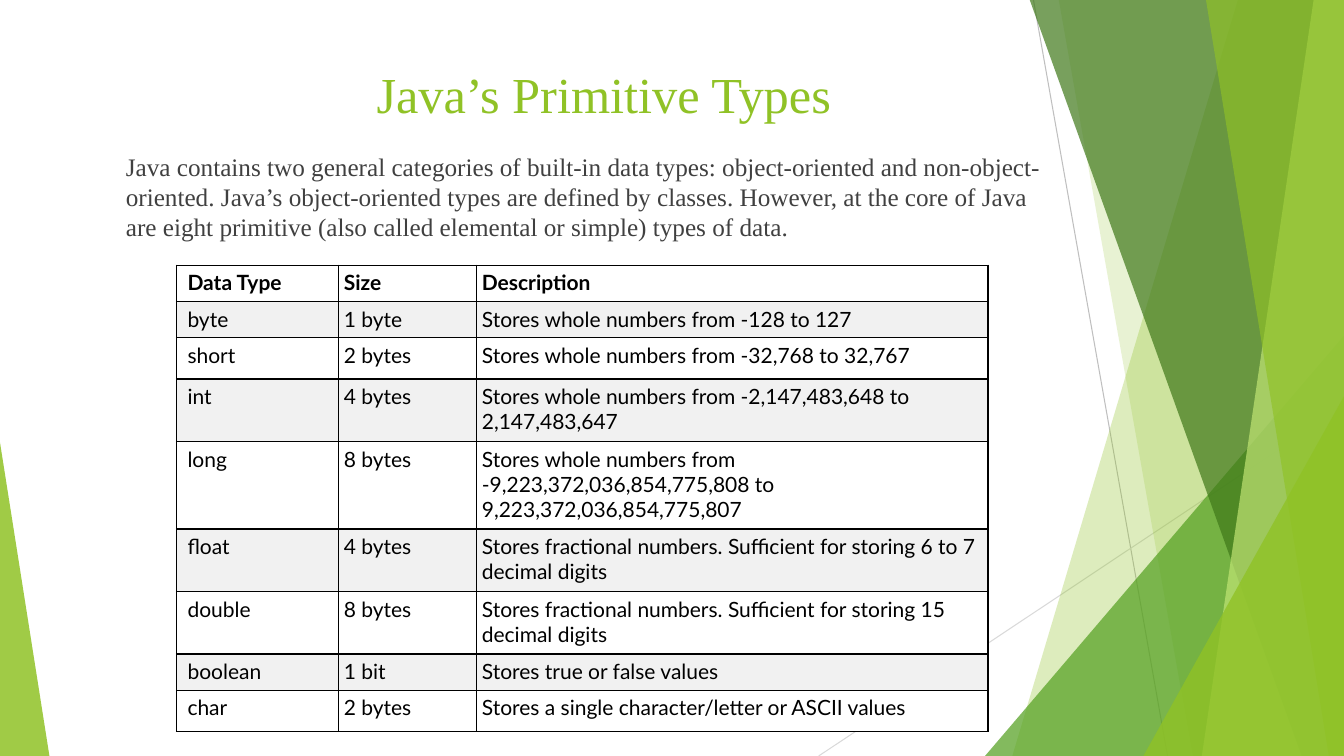
from typing import NamedTuple

from lxml.etree import SubElement
from pptx import Presentation
from pptx.dml.color import RGBColor
from pptx.enum.shapes import MSO_CONNECTOR, MSO_SHAPE
from pptx.enum.text import MSO_ANCHOR as Anchor, PP_ALIGN as Align
from pptx.oxml.ns import qn
from pptx.util import Inches, Pt

WHITE = RGBColor(0xFF, 0xFF, 0xFF)
BLACK = RGBColor(0x00, 0x00, 0x00)
BAND = RGBColor(0xF1, 0xF1, 0xF1)
BODY_GRAY = RGBColor(0x40, 0x40, 0x40)
LINE_GRAY = RGBColor(0xBF, 0xBF, 0xBF)
PALE_GRAY = RGBColor(0xD9, 0xD9, 0xD9)
LIME = RGBColor(0x90, 0xC2, 0x26)
GREEN = RGBColor(0x54, 0xA0, 0x21)
FOREST = RGBColor(0x3F, 0x78, 0x19)
PALE_LIME = RGBColor(0xC0, 0xE4, 0x74)

SERIF = "Times New Roman"
SANS = "Lato"
WIDTH, HEIGHT, BLEED = 13.33, 7.5, -0.01


class Ray(NamedTuple):
    start: tuple[float, float]
    end: tuple[float, float]
    color: RGBColor


class Facet(NamedTuple):
    top_left: float
    bottom_left: float
    color: RGBColor
    opacity: int


class Wedge(NamedTuple):
    left: float
    top: float
    width: float
    apex: float
    color: RGBColor
    opacity: int


class DataType(NamedTuple):
    name: str
    size: str
    description: str
    height: float


RAYS = [
    Ray((10.25, 0), (11.58, HEIGHT), LINE_GRAY),
    Ray((WIDTH, 4.03), (8.12, HEIGHT), PALE_GRAY),
]
FACETS_AND_WEDGES = [
    Facet(12.28, 10.04, LIME, 30),
    Facet(10.5, 11.83, LIME, 20),
    Wedge(9.77, 3.33, 3.56, 1, GREEN, 72),
    Facet(10.21, 12.91, FOREST, 70),
    Facet(13.03, 11.92, PALE_LIME, 70),
    Facet(11.96, 13.18, LIME, 65),
    Wedge(11.34, 3.93, 1.99, 1, LIME, 80),
    Wedge(0, 4.39, 0.49, 0, LIME, 85),
]
COLUMN_WIDTHS = [1.61, 1.37, 5.07]
ROWS = [
    DataType("Data Type", "Size", "Description", 0.36),
    DataType("byte", "1 byte", "Stores whole numbers from -128 to 127", 0.36),
    DataType("short", "2 bytes", "Stores whole numbers from -32,768 to 32,767", 0.41),
    DataType("int", "4 bytes",
             "Stores whole numbers from -2,147,483,648 to 2,147,483,647", 0.62),
    DataType("long", "8 bytes",
             "Stores whole numbers from -9,223,372,036,854,775,808 to "
             "9,223,372,036,854,775,807", 0.87),
    DataType("float", "4 bytes",
             "Stores fractional numbers. Sufficient for storing 6 to 7 decimal digits", 0.62),
    DataType("double", "8 bytes",
             "Stores fractional numbers. Sufficient for storing 15 decimal digits", 0.62),
    DataType("boolean", "1 bit", "Stores true or false values", 0.36),
    DataType("char", "2 bytes", "Stores a single character/letter or ASCII values", 0.41),
]
INTRO = (
    "Java contains two general categories of built-in data types: object-oriented and "
    "non-object- oriented. Java’s object-oriented types are defined by classes. However, "
    "at the core of Java are eight primitive (also called elemental or simple) types of data."
)


def write(frame, text: str, *, font: str, size: float, color: RGBColor,
          bold: bool = False, align: Align = Align.LEFT, before: float = 0,
          indent: float = 0) -> None:
    frame.word_wrap = True
    para = frame.paragraphs[0]
    para.alignment = align
    para.space_before = Pt(before)
    if indent:
        para._p.get_or_add_pPr().set("marL", str(Inches(indent)))
    span = para.add_run()
    span.text = text
    span.font.name = font
    span.font.size = Pt(size)
    span.font.bold = bold
    span.font.color.rgb = color


def add_box(page, left: float, top: float, width: float, height: float,
            anchor: Anchor):
    box = page.shapes.add_textbox(Inches(left), Inches(top), Inches(width), Inches(height))
    box.text_frame.vertical_anchor = anchor
    return box.text_frame


def draw_ray(page, ray: Ray) -> None:
    line = page.shapes.add_connector(
        MSO_CONNECTOR.STRAIGHT, *map(Inches, ray.start + ray.end))
    line.line.color.rgb = ray.color
    line.line.width = Pt(0.75)
    SubElement(line._element.spPr, qn("a:effectLst"))


def paint(shape, color: RGBColor, opacity: int) -> None:
    shape.shadow.inherit = False
    shape.line.fill.background()
    shape.fill.solid()
    shape.fill.fore_color.rgb = color
    tint = shape._element.spPr.find(qn("a:solidFill"))[0]
    SubElement(tint, qn("a:alpha")).set("val", str(opacity * 1000))


def draw_facet(page, facet: Facet) -> None:
    outline = page.shapes.build_freeform(Inches(facet.top_left), Inches(BLEED))
    corners = [(WIDTH, BLEED), (WIDTH, HEIGHT), (facet.bottom_left, HEIGHT)]
    outline.add_line_segments([(Inches(x), Inches(y)) for x, y in corners], close=True)
    paint(outline.convert_to_shape(), facet.color, facet.opacity)


def draw_wedge(page, wedge: Wedge) -> None:
    shape = page.shapes.add_shape(
        MSO_SHAPE.ISOSCELES_TRIANGLE, Inches(wedge.left), Inches(wedge.top),
        Inches(wedge.width), Inches(HEIGHT - wedge.top))
    shape.adjustments[0] = wedge.apex
    paint(shape, wedge.color, wedge.opacity)


def add_borders(cell) -> None:
    properties = cell._tc.get_or_add_tcPr()
    for side in ("lnL", "lnR", "lnT", "lnB"):
        edge = SubElement(properties, qn(f"a:{side}"))
        edge.set("w", str(Pt(1)))
        fill = SubElement(edge, qn("a:solidFill"))
        SubElement(fill, qn("a:srgbClr")).set("val", str(BLACK))


def draw_table(page, rows: list[DataType]) -> None:
    table = page.shapes.add_table(
        len(rows), len(COLUMN_WIDTHS), Inches(1.75), Inches(2.63),
        Inches(sum(COLUMN_WIDTHS)), Inches(sum(row.height for row in rows))).table
    table.first_row = table.horz_banding = False
    for column, width in zip(table.columns, COLUMN_WIDTHS):
        column.width = Inches(width)
    for r, row in enumerate(rows):
        table.rows[r].height = Inches(row.height)
        for c, text in enumerate((row.name, row.size, row.description)):
            cell = table.cell(r, c)
            cell.margin_left = Inches(0.05 if c else 0.11)
            cell.margin_right = cell.margin_top = cell.margin_bottom = Inches(0.05)
            add_borders(cell)
            cell.fill.solid()
            cell.fill.fore_color.rgb = BAND if r % 2 else WHITE
            write(cell.text_frame, text, font=SANS, size=15, color=BLACK, bold=r == 0)


def main() -> None:
    deck = Presentation()
    deck.slide_width, deck.slide_height = Inches(WIDTH), Inches(HEIGHT)
    page = deck.slides.add_slide(deck.slide_layouts[6])
    for ray in RAYS:
        draw_ray(page, ray)
    for item in FACETS_AND_WEDGES:
        if isinstance(item, Facet):
            draw_facet(page, item)
        else:
            draw_wedge(page, item)
    write(add_box(page, 1.64, 0.53, 8.7, 0.8, Anchor.MIDDLE), "Java’s Primitive Types",
          font=SERIF, size=36, color=LIME, align=Align.CENTER)
    write(add_box(page, 1.14, 1.45, 9.38, 5.44, Anchor.TOP), INTRO,
          font=SERIF, size=18, color=BODY_GRAY, before=10, indent=0.01)
    draw_table(page, ROWS)
    deck.save("out.pptx")


if __name__ == "__main__":
    main()
